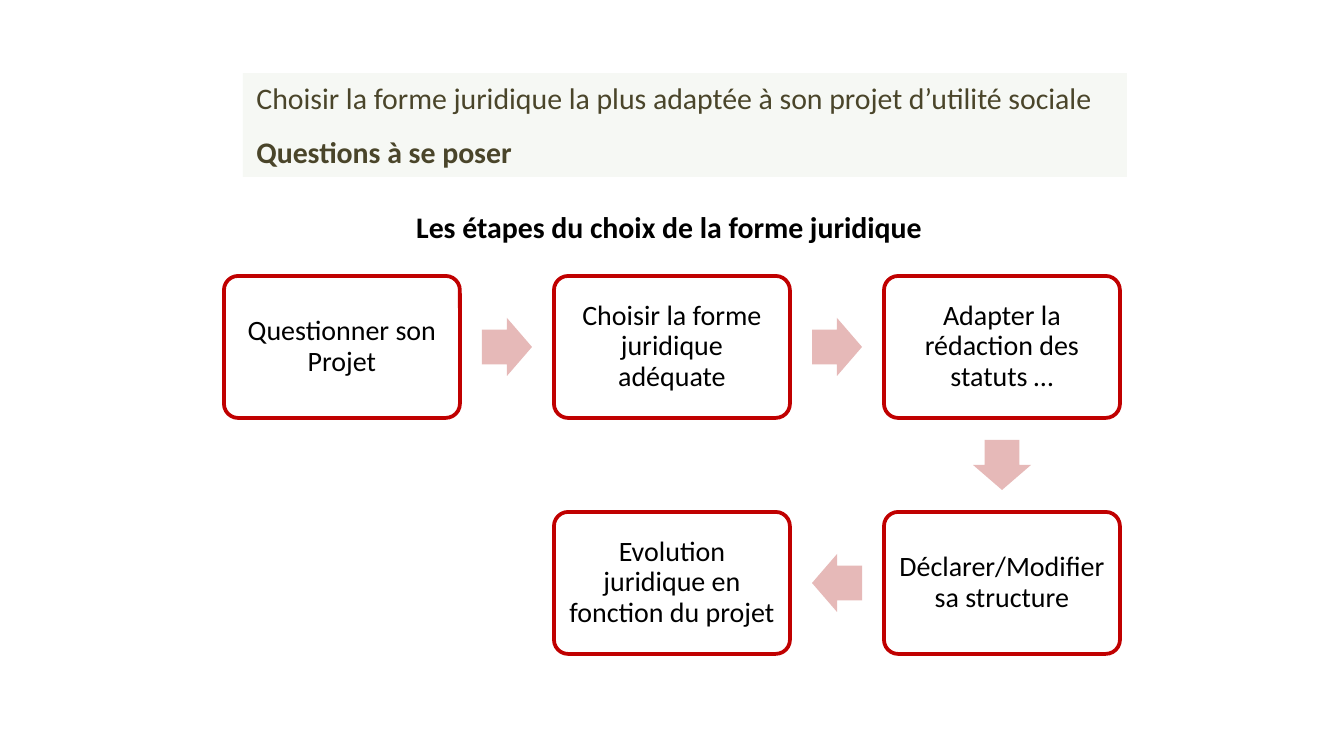
import pptx
import pptx.util
import pptx.dml.color
import pptx.enum.shapes
import pptx.enum.text
from dataclasses import dataclass


@dataclass(frozen=True)
class Theme:
    font: str = "Calibri"
    ink: str = "000000"
    heading: str = "4A452A"
    banner: str = "F6F8F4"
    box: str = "FFFFFF"
    border: str = "C00000"
    arrow: str = "E6B9B8"
    heading_size: int = 16
    step_size: int = 15
    border_width: int = 2


theme = Theme()
SCALE = 914400 / 134.4  # EMU per px
ALIGN = pptx.enum.text.PP_ALIGN
ANCHOR = pptx.enum.text.MSO_ANCHOR
SHAPE = pptx.enum.shapes.MSO_SHAPE
rgb = pptx.dml.color.RGBColor.from_string


def px(*lengths):
    return [pptx.util.Emu(round(length * SCALE)) for length in lengths]


def add_run(paragraph, text, size, color, bold=False):
    run = paragraph.add_run()
    run.text = text
    run.font.name = theme.font
    run.font.size = pptx.util.Pt(size)
    run.font.bold = bold
    run.font.color.rgb = rgb(color)


deck = pptx.Presentation()
deck.slide_width, deck.slide_height = px(1344, 756)
slide = deck.slides.add_slide(deck.slide_layouts[5])

# Heading banner
banner = slide.shapes.title
banner.left, banner.top, banner.width, banner.height = px(243, 73, 884, 104)
banner.fill.solid()
banner.fill.fore_color.rgb = rgb(theme.banner)
heading = banner.text_frame
heading.word_wrap = True
heading.auto_size = pptx.enum.text.MSO_AUTO_SIZE.NONE
heading.vertical_anchor = ANCHOR.TOP
topic = heading.paragraphs[0]
topic.alignment = ALIGN.LEFT
add_run(topic, "Choisir la forme juridique la plus adaptée à son projet d’utilité sociale",
        theme.heading_size, theme.heading)
section = heading.add_paragraph()
section.alignment = ALIGN.LEFT
section.line_spacing = 1.5
add_run(section, "Questions à se poser", theme.heading_size, theme.heading, bold=True)

# Diagram caption
caption = slide.shapes.add_textbox(*px(403, 202, 536, 50)).text_frame
caption.word_wrap = True
add_run(caption.paragraphs[0], "Les étapes du choix de la forme juridique",
        theme.heading_size, theme.ink, bold=True)

# Steps, each with its column and row in the grid
GRID_LEFT, GRID_TOP, COLUMN_PITCH, ROW_PITCH = 224, 276, 330, 236
STEP_WIDTH, STEP_HEIGHT = 236, 142
steps = [
    ("Questionner son Projet", 0, 0),
    ("Choisir la forme juridique adéquate", 1, 0),
    ("Adapter la rédaction des statuts …", 2, 0),
    ("Déclarer/Modifier sa structure", 2, 1),
    ("Evolution juridique en fonction du projet", 1, 1),
]
centers = []
for label, column, row in steps:
    left = GRID_LEFT + column * COLUMN_PITCH
    top = GRID_TOP + row * ROW_PITCH
    centers.append((left + STEP_WIDTH / 2, top + STEP_HEIGHT / 2))
    step = slide.shapes.add_shape(SHAPE.ROUNDED_RECTANGLE, *px(left, top, STEP_WIDTH, STEP_HEIGHT))
    step.adjustments[0] = 0.1
    step.shadow.inherit = False
    step.fill.solid()
    step.fill.fore_color.rgb = rgb(theme.box)
    step.line.color.rgb = rgb(theme.border)
    step.line.width = pptx.util.Pt(theme.border_width)
    frame = step.text_frame
    frame.word_wrap = True
    frame.vertical_anchor = ANCHOR.MIDDLE
    frame.margin_left, frame.margin_top, frame.margin_right, frame.margin_bottom = px(8, 8, 8, 8)
    paragraph = frame.paragraphs[0]
    paragraph.alignment = ALIGN.CENTER
    paragraph.line_spacing = 0.9
    add_run(paragraph, label, theme.step_size, theme.ink)

# Arrows, midway between one step and the next
ARROW_LENGTH, ARROW_BREADTH = 50, 58
for (x1, y1), (x2, y2) in zip(centers, centers[1:]):
    arrow = slide.shapes.add_shape(
        SHAPE.RIGHT_ARROW,
        *px((x1 + x2 - ARROW_LENGTH) / 2, (y1 + y2 - ARROW_BREADTH) / 2,
            ARROW_LENGTH, ARROW_BREADTH))
    arrow.adjustments[0] = 0.6
    arrow.adjustments[1] = 0.5
    arrow.rotation = 90 if y2 > y1 else 180 if x2 < x1 else 0
    arrow.shadow.inherit = False
    arrow.fill.solid()
    arrow.fill.fore_color.rgb = rgb(theme.arrow)
    arrow.line.fill.background()

deck.save("out.pptx")
